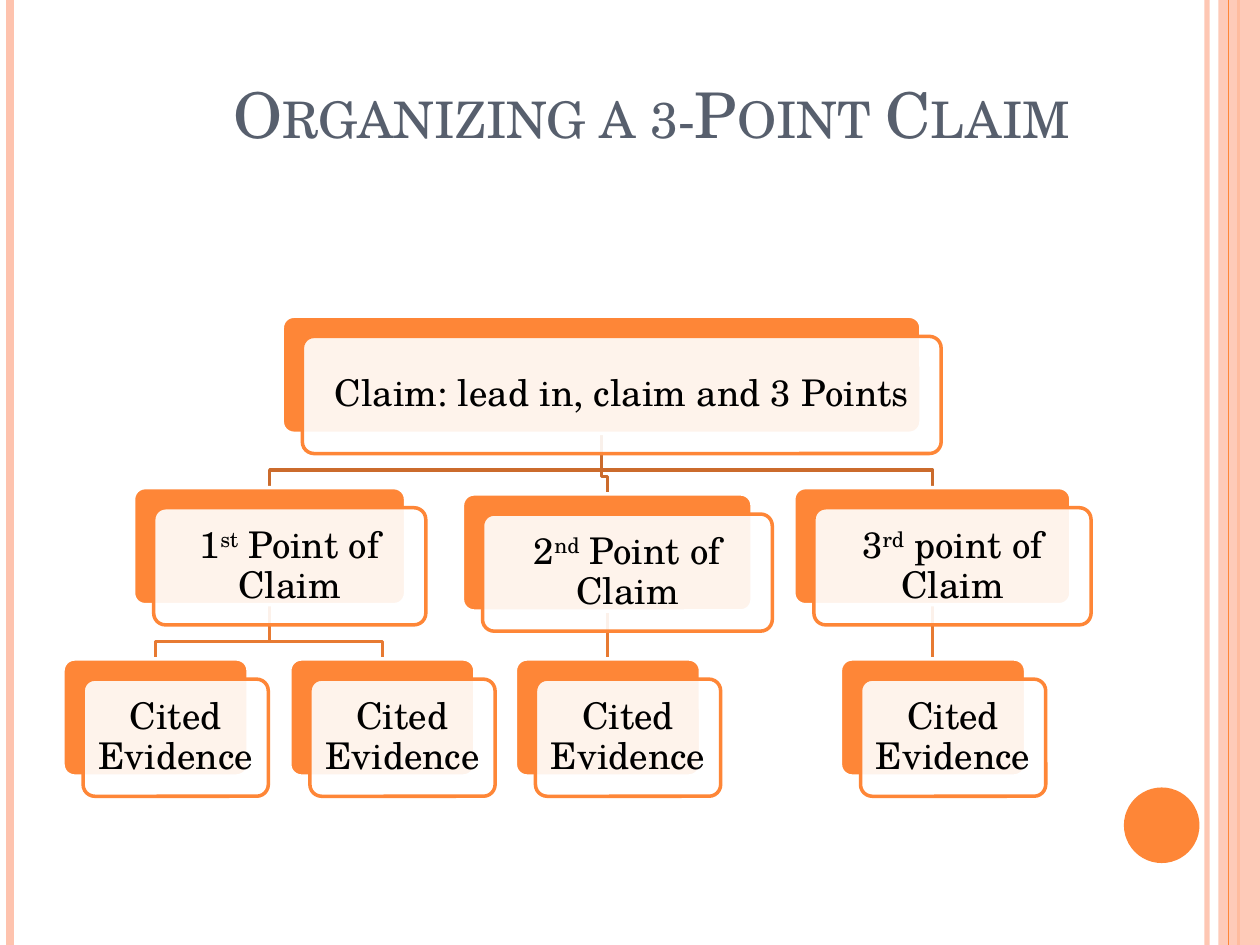
from lxml.etree import SubElement
from pptx import Presentation
from pptx.dml.color import RGBColor
from pptx.enum.shapes import MSO_CONNECTOR as Conn, MSO_SHAPE as Shape
from pptx.enum.text import MSO_ANCHOR as Anchor, MSO_AUTO_SIZE as Auto, PP_ALIGN as Align
from pptx.oxml.ns import qn
from pptx.util import Inches, Pt

FACE = "TeX Gyre Schola"
ORANGE, PEACH, WHITE = "FE8637", "FEC3AE", "FFFFFF"
TALL, SHIFT, BEND = 0.93, 0.16, 0.14
PROOF = "Cited Evidence"

ROOT = (2.24, 2.51, 5.07, ["Claim: lead in, claim and 3 Points"])
POINTS = [
    ((1.06, 3.87, 2.16, ["1", "st", " Point of Claim"]), [0.5, 2.3]),
    ((3.67, 3.92, 2.3, ["2", "nd", " Point of Claim"]), [4.09]),
    ((6.3, 3.87, 2.2, ["3", "rd", " point of Claim"]), [6.67]),
]
RAILS = [(9.58, PEACH, 3, 93), (0.08, PEACH, 4.5, 100), (9.83, ORANGE, 1.5, 100)]


def apply(item, form):
    """Set every attribute named in the dict."""
    for key, val in form.items():
        setattr(item, key, val)


def paint(fill, hue, alpha=100):
    """Fill with a solid colour at a given opacity in percent."""
    fill.solid()
    fill.fore_color.rgb = RGBColor.from_string(hue)
    if alpha < 100:
        tone = fill._xPr.find(qn("a:solidFill"))[0]
        SubElement(tone, qn("a:alpha"), val=str(alpha * 1000))


def stroke(line, hue, width, alpha=100):
    """Colour a line and set its width."""
    paint(line.fill, hue, alpha)
    line.width = Pt(width)


def add_line(slide, x, top, end, hue, width, alpha=100):
    """Draw a vertical line without a shadow."""
    line = slide.shapes.add_connector(
        Conn.STRAIGHT, Inches(x), Inches(top), Inches(x), Inches(end))
    stroke(line.line, hue, width, alpha)
    SubElement(line._element.spPr, qn("a:effectLst"))


def add_shape(slide, kind, box, hue, alpha=100, edge=None):
    """Draw a preset shape with a fill and an optional edge."""
    shape = slide.shapes.add_shape(kind, *map(Inches, box))
    shape.shadow.inherit = False
    paint(shape.fill, hue, alpha)
    if edge:
        stroke(shape.line, edge, 2)
    else:
        shape.line.fill.background()
    return shape


def add_text(para, text, size, hue, base=0):
    """Add a run in the deck's typeface, raised by base percent."""
    run = para.add_run()
    run.text = text
    apply(run.font, {"name": FACE, "size": Pt(size), "bold": False})
    run.font.color.rgb = RGBColor.from_string(hue)
    if base:
        run.font._element.set("baseline", str(base * 1000))
    return run


def add_card(slide, node):
    """Draw a solid card with a labelled pale card over it."""
    x, y, wide, parts = node
    back = add_shape(slide, Shape.ROUNDED_RECTANGLE, (x, y, wide, TALL), ORANGE, edge=WHITE)
    face = add_shape(slide, Shape.ROUNDED_RECTANGLE,
                     (x + SHIFT, y + SHIFT, wide, TALL), WHITE, 90, ORANGE)
    for card in (back, face):
        card.adjustments[0] = 0.1
    frame = face.text_frame
    pad = Inches(0.08)
    apply(frame, {"word_wrap": True, "vertical_anchor": Anchor.MIDDLE,
                  "margin_left": pad, "margin_right": pad,
                  "margin_top": pad, "margin_bottom": pad})
    para = frame.paragraphs[0]
    apply(para, {"alignment": Align.CENTER, "line_spacing": 0.9})
    for spot, part in enumerate(parts):
        add_text(para, part, 21, "000000", 30 if spot == 1 else 0)


def add_link(slide, upper, lower, hue):
    """Join the foot of one card to the top of another."""
    start, end = (node[0] + node[2] / 2 for node in (upper, lower))
    top, foot = upper[1] + TALL, lower[1]
    if abs(start - end) < 0.01:
        add_line(slide, start, top, foot, hue, 2)
        return
    turn = foot - BEND
    pen = slide.shapes.build_freeform(Inches(start), Inches(top))
    route = [(start, turn), (end, turn), (end, foot)]
    pen.add_line_segments([(Inches(x), Inches(y)) for x, y in route], close=False)
    link = pen.convert_to_shape()
    link.shadow.inherit = False
    link.fill.background()
    stroke(link.line, hue, 2)


def add_title(slide, text):
    """Place and format the title in small capitals."""
    title = slide.shapes.title
    apply(title, {"left": Inches(1.75), "top": Inches(0.33),
                  "width": Inches(7.58), "height": Inches(0.92)})
    frame = title.text_frame
    apply(frame, {"vertical_anchor": Anchor.BOTTOM, "word_wrap": True,
                  "auto_size": Auto.NONE})
    para = frame.paragraphs[0]
    para.alignment = Align.LEFT
    run = add_text(para, text, 36, "575F6D")
    run.font._element.set("cap", "small")


def add_trim(slide):
    """Draw the side rails, the band and the disc."""
    for x, hue, width, alpha in RAILS:
        add_line(slide, x, 0, 7.5, hue, width, alpha)
    add_shape(slide, Shape.RECTANGLE, (9.67, 0, 0.33, 7.5), PEACH, 87)
    add_line(slide, 9.75, 0, 7.5, ORANGE, 0.75)
    add_shape(slide, Shape.OVAL, (8.92, 6.25, 0.6, 0.6), ORANGE)


def add_tree(slide):
    """Draw the links, then the cards of the claim tree."""
    cards = [ROOT]
    for point, lefts in POINTS:
        leaves = [(x, 5.23, 1.47, [PROOF]) for x in lefts]
        add_link(slide, ROOT, point, "CB6B2C")
        for leaf in leaves:
            add_link(slide, point, leaf, "E77A32")
        cards += [point, *leaves]
    for card in cards:
        add_card(slide, card)


def main():
    """Build and save the slide."""
    deck = Presentation()
    apply(deck, {"slide_width": Inches(10), "slide_height": Inches(7.5)})
    slide = deck.slides.add_slide(deck.slide_layouts[5])
    add_trim(slide)
    add_title(slide, "Organizing a 3-Point Claim")
    add_tree(slide)
    deck.save("out.pptx")


if __name__ == "__main__":
    main()
